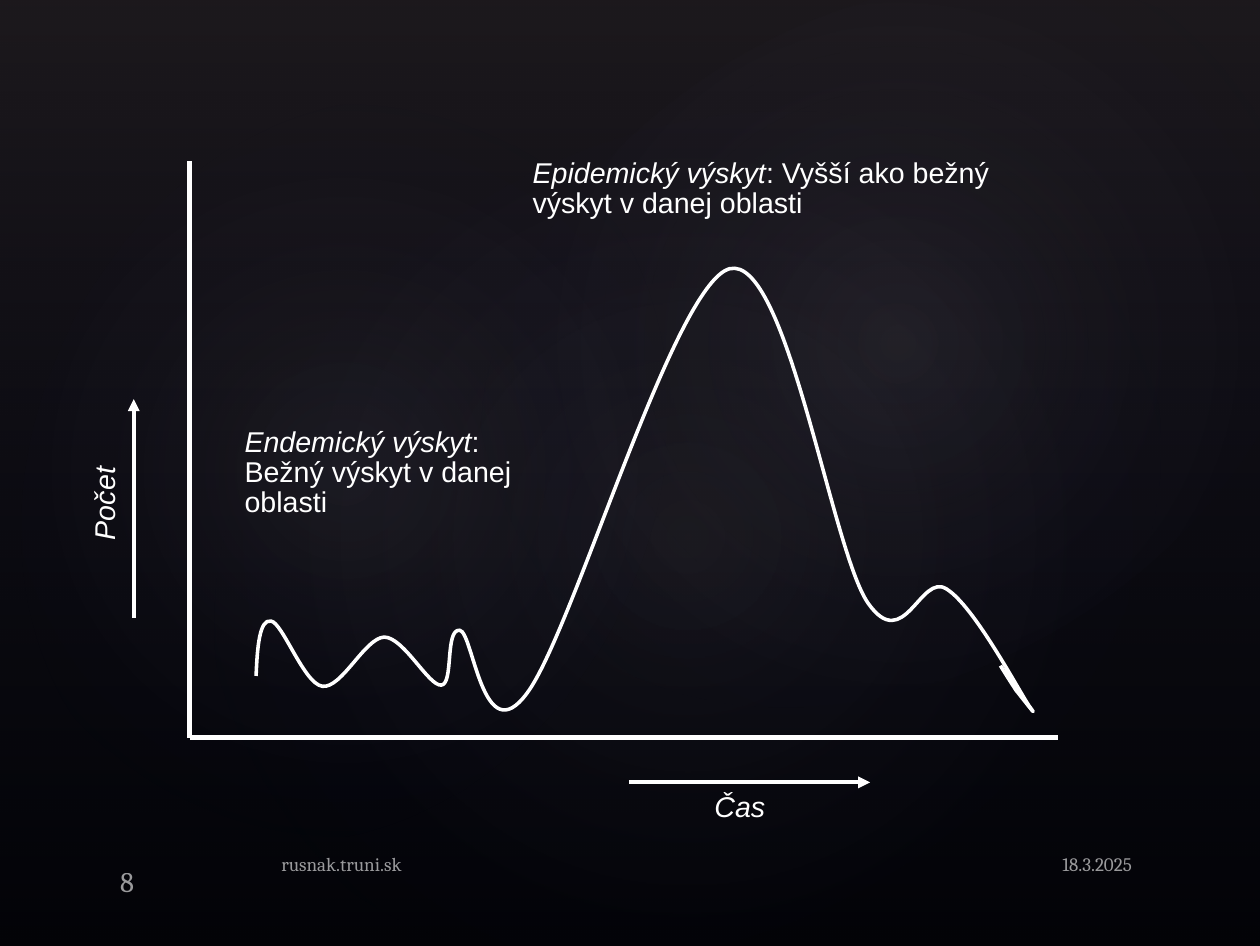
from pptx import Presentation
from pptx.dml.color import RGBColor
from pptx.enum.shapes import MSO_CONNECTOR, MSO_SHAPE
from pptx.enum.text import MSO_ANCHOR, MSO_AUTO_SIZE, PP_ALIGN
from pptx.oxml import parse_xml
from pptx.oxml.ns import nsdecls, qn
from pptx.oxml.xmlchemy import OxmlElement
from pptx.util import Inches, Pt

WHITE = "FFFFFF"
RADIAL = ('<a:path path="circle"><a:fillToRect l="50000" t="50000" '
          'r="50000" b="50000"/></a:path>')
LINEAR = '<a:lin ang="5400000" scaled="0"/>'


def color(code):
    return RGBColor.from_string(code)


class Board:
    def __init__(self, slide):
        self.slide = slide
        self.shapes = slide.shapes
        self.font = "Arial"
        self.size = 18
        self.ink = WHITE

    def back(self, code):
        fill = self.slide.background.fill
        fill.solid()
        fill.fore_color.rgb = color(code)

    def glow(self, kind, box, stops, way, turn=0):
        shape = self.shapes.add_shape(kind, *map(Inches, box))
        shape.rotation = turn
        shape.shadow.inherit = False
        shape.line.fill.background()
        shape.fill.background()
        marks = "".join(
            f'<a:gs pos="{pos * 1000}"><a:srgbClr val="{code}">'
            f'<a:alpha val="{alpha * 1000}"/></a:srgbClr></a:gs>'
            for pos, code, alpha in stops)
        grad = parse_xml(f'<a:gradFill {nsdecls("a")} rotWithShape="1">'
                         f'<a:gsLst>{marks}</a:gsLst>{way}</a:gradFill>')
        props = shape._element.spPr
        props.replace(props.find(qn("a:noFill")), grad)

    def line(self, start, end, width, arrow=False):
        link = self.shapes.add_connector(
            MSO_CONNECTOR.STRAIGHT, *map(Inches, start + end))
        link.line.color.rgb = color(self.ink)
        link.line.width = Pt(width)
        props = link._element.spPr
        if arrow:
            tail = OxmlElement("a:tailEnd")
            tail.set("type", "triangle")
            props.find(qn("a:ln")).append(tail)
        props.append(OxmlElement("a:effectLst"))

    def curve(self, box, start, parts, width):
        """Span the box, then draw the cubic parts inside it."""
        left, top, wide, high = box
        pen = self.shapes.build_freeform(Inches(left), Inches(top))
        pen.add_line_segments([(Inches(left + wide), Inches(top + high))], close=False)
        shape = pen.convert_to_shape()
        track = shape._element.spPr.find(".//" + qn("a:path"))
        for step in list(track):
            track.remove(step)
        steps = [("a:moveTo", [start])] + [("a:cubicBezTo", part) for part in parts]
        for tag, points in steps:
            step = OxmlElement(tag)
            for x, y in points:
                spot = OxmlElement("a:pt")
                spot.set("x", str(Inches(x - left)))
                spot.set("y", str(Inches(y - top)))
                step.append(spot)
            track.append(step)
        shape.shadow.inherit = False
        shape.fill.background()
        shape.line.color.rgb = color(self.ink)
        shape.line.width = Pt(width)

    def text(self, box, runs, turn=0):
        """Each run is a pair: words, italic."""
        shape = self.shapes.add_textbox(*map(Inches, box))
        shape.rotation = turn
        frame = shape.text_frame
        frame.word_wrap = True
        frame.auto_size = MSO_AUTO_SIZE.SHAPE_TO_FIT_TEXT
        para = frame.paragraphs[0]
        para.line_spacing = 0.87
        for words, slant in runs:
            self.run(para, words, self.font, self.size).italic = slant

    def foot(self, left, width, words, size=12, align=PP_ALIGN.LEFT,
             anchor=MSO_ANCHOR.TOP, base=0.06):
        shape = self.shapes.add_textbox(*map(Inches, (left, 7.42, width, 0.44)))
        frame = shape.text_frame
        frame.word_wrap = True
        frame.vertical_anchor = anchor
        frame.margin_left = frame.margin_right = Inches(0.11)
        frame.margin_top, frame.margin_bottom = Inches(0.03), Inches(base)
        para = frame.paragraphs[0]
        para.alignment = align
        font = self.run(para, words, "Cambria", size)
        alpha = OxmlElement("a:alpha")
        alpha.set("val", "60000")
        font._element.find(".//" + qn("a:srgbClr")).append(alpha)

    def run(self, para, words, name, size):
        run = para.add_run()
        run.text = words
        font = run.font
        font.name, font.size = name, Pt(size)
        font.color.rgb = color(self.ink)
        return font


def main():
    deck = Presentation()
    deck.slide_width, deck.slide_height = Inches(11.02), Inches(8.27)
    board = Board(deck.slides.add_slide(deck.slide_layouts[6]))

    # Dark backdrop with soft glows
    board.back("000000")
    board.glow(MSO_SHAPE.RECTANGLE, (0, 0, 11.02, 8.27),
               [(0, "504652", 36), (100, "242852", 10)], LINEAR)
    for box, turn, alpha in [((1.65, 1.25, 8.73, 6.88), 328.7, 7),
                             ((-0.33, 1.41, 6.68, 5.4), 294.3, 8),
                             ((3.95, 0.14, 7.81, 5.73), 328.7, 8)]:
        board.glow(MSO_SHAPE.OVAL, box,
                   [(0, "C4BCC6", alpha), (58, "242852", 0)], RADIAL, turn)

    # Footer
    board.foot(8.74, 1.27, "18.3.2025", align=PP_ALIGN.RIGHT)
    board.foot(0.94, 0.9, "8", 18, anchor=MSO_ANCHOR.BOTTOM, base=0.01)
    board.foot(2.35, 5.99, "rusnak.truni.sk")

    # Axes and their arrows
    origin = (1.66, 6.45)
    board.line((1.66, 1.41), origin, 3)
    board.line((9.25, 6.45), origin, 3)
    board.line((5.5, 6.84), (7.61, 6.84), 2.5, arrow=True)
    board.line((1.17, 5.4), (1.17, 3.49), 2.5, arrow=True)

    # Case curve: two handles and an end point per part
    board.curve((2.24, 2.35, 6.8, 3.87), (2.24, 5.91), [
        ((2.25, 5.66), (2.27, 5.41), (2.37, 5.43)),
        ((2.47, 5.44), (2.66, 5.98), (2.82, 6)),
        ((2.99, 6.02), (3.19, 5.58), (3.36, 5.57)),
        ((3.53, 5.57), (3.75, 6), (3.86, 5.99)),
        ((3.97, 5.98), (3.89, 5.5), (4.02, 5.51)),
        ((4.14, 5.52), (4.22, 6.59), (4.61, 6.06)),
        ((5.01, 5.53), (5.89, 2.49), (6.38, 2.35)),
        ((6.88, 2.22), (7.27, 4.8), (7.59, 5.27)),
        ((7.91, 5.73), (8.05, 5), (8.28, 5.15)),
        ((8.52, 5.3), (8.9, 6.02), (9, 6.17)),
        ((9.11, 6.32), (8.94, 6.1), (8.89, 6.04)),
        ((8.85, 5.98), (8.8, 5.9), (8.75, 5.82)),
    ], 2.25)

    # Labels
    board.text((2.04, 3.7, 2.82, 0.89),
               [("Endemický výskyt", True), (": Bežný výskyt v danej oblasti", False)])
    board.text((4.56, 1.35, 4.81, 0.63),
               [("Epidemický výskyt", True),
                (": Vyšší ako bežný výskyt v danej oblasti", False)])
    board.text((6.15, 6.89, 0.81, 0.36), [("Čas", True)])
    board.text((0.48, 4.19, 0.9, 0.36), [("Počet", True)], turn=270)

    deck.save("out.pptx")


if __name__ == "__main__":
    main()
